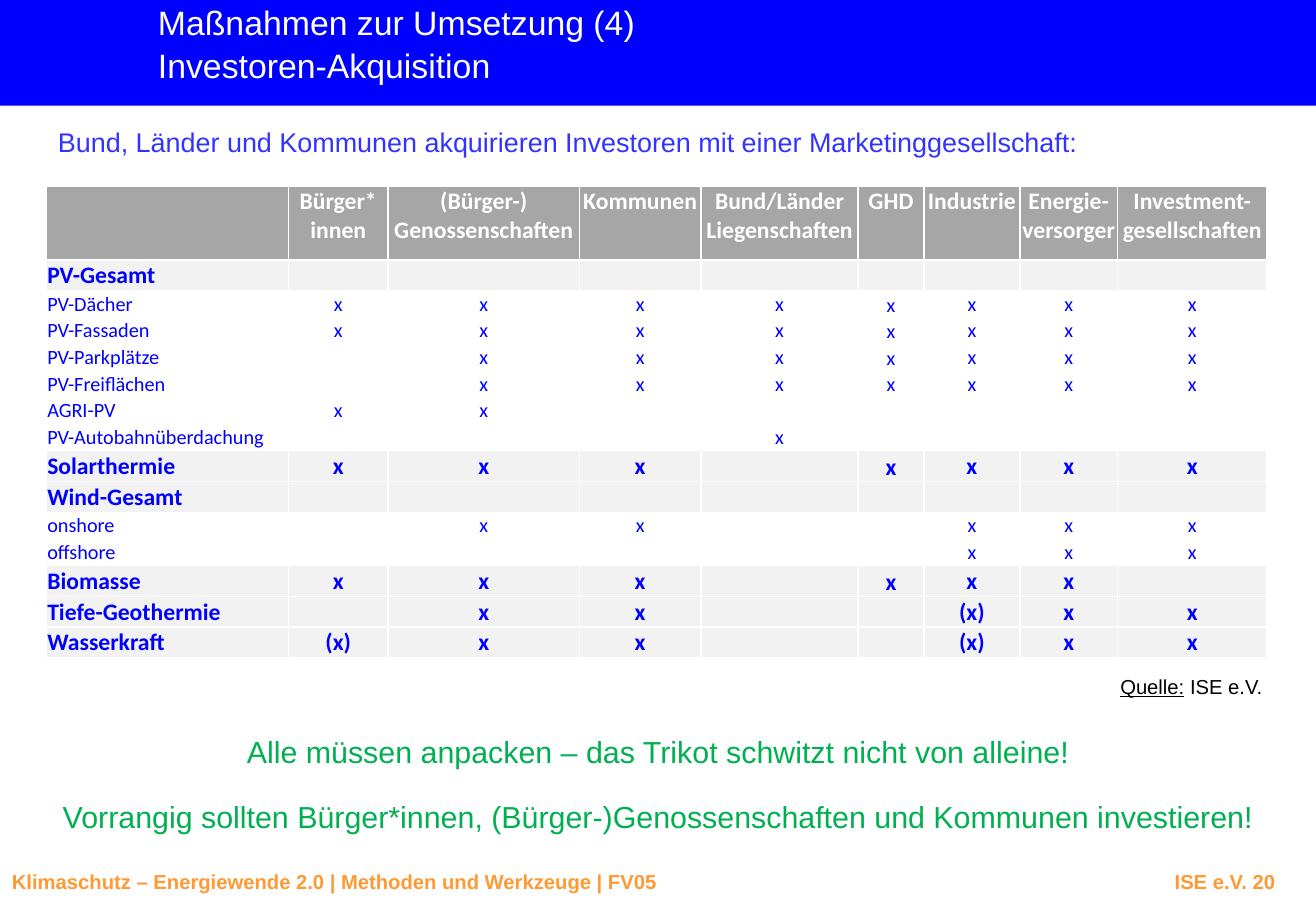
from dataclasses import dataclass
from itertools import accumulate

from lxml import etree
from pptx import Presentation
from pptx import util as u
from pptx.dml.color import RGBColor
from pptx.enum import shapes, text
from pptx.oxml import ns


@dataclass(frozen=True)
class Theme:
    bar: str = "0000FF"
    lead: str = "3333FF"
    entry: str = "0000FF"
    appeal: str = "00B050"
    footer: str = "FF9933"
    heading_fill: str = "A6A6A6"
    group_fill: str = "F2F2F2"
    white: str = "FFFFFF"
    black: str = "000000"
    sans: str = "Arial"
    grid_font: str = "Calibri"
    title_size: int = 20
    appeal_size: int = 18
    lead_size: int = 16
    group_size: int = 14
    small_size: int = 12


@dataclass(frozen=True)
class Box:
    left: float
    top: float
    width: float
    height: float

    def area(self, left, top, width, height):
        return Box(self.left + self.width * left / 100, self.top + self.height * top / 100,
                   self.width * width / 100, self.height * height / 100)

    def emu(self):
        return [u.Inches(n) for n in (self.left, self.top, self.width, self.height)]


THEME = Theme()
PAGE = Box(0, 0, 10.83, 7.5)
ALIGN = text.PP_ALIGN
TOP, BOTTOM = text.MSO_ANCHOR.TOP, text.MSO_ANCHOR.BOTTOM
NO_MARGIN = (0, 0, 0, 0)
CELL_MARGIN = (0.01, 0.01, 0.01, 0)

HEADINGS = ["", "Bürger*\ninnen", "(Bürger-)\nGenossenschaften", "Kommunen",
            "Bund/Länder\nLiegenschaften", "GHD", "Industrie",
            "Energie-\nversorger", "Investment-gesellschaften"]
COLUMN_SHARES = [199, 82, 157, 100, 129, 54, 79, 80, 123]
HEADING_SHARE, GROUP_SHARE, DETAIL_SHARE = 61, 25.3, 21.9
GHD_COLUMN = HEADINGS.index("GHD")
MEASURES = [
    ("PV-Gesamt", True, "- - - - - - - -"),
    ("PV-Dächer", False, "x x x x x x x x"),
    ("PV-Fassaden", False, "x x x x x x x x"),
    ("PV-Parkplätze", False, "- x x x x x x x"),
    ("PV-Freiflächen", False, "- x x x x x x x"),
    ("AGRI-PV", False, "x x - - - - - -"),
    ("PV-Autobahnüberdachung", False, "- - - x - - - -"),
    ("Solarthermie", True, "x x x - x x x x"),
    ("Wind-Gesamt", True, "- - - - - - - -"),
    ("onshore", False, "- x x - - x x x"),
    ("offshore", False, "- - - - - x x x"),
    ("Biomasse", True, "x x x - x x x -"),
    ("Tiefe-Geothermie", True, "- x x - - (x) x x"),
    ("Wasserkraft", True, "(x) x x - - (x) x x"),
]


def write(frame, content, size, color, font=THEME.sans, bold=False, align=ALIGN.LEFT,
          spacing=None, underlined="", tab=None):
    for index, line in enumerate(content.split("\n")):
        paragraph = frame.paragraphs[0] if index == 0 else frame.add_paragraph()
        paragraph.alignment = align
        if spacing:
            paragraph.line_spacing = spacing
        if tab:
            stops = etree.SubElement(paragraph._p.get_or_add_pPr(), ns.qn("a:tabLst"))
            etree.SubElement(stops, ns.qn("a:tab"), pos=str(u.Inches(tab)), algn="r")
        for words, underline in ((underlined, True), (line, False)):
            if words:
                run = paragraph.add_run()
                run.text = words
                run.font.size = u.Pt(size)
                run.font.name = font
                run.font.bold = bold
                run.font.underline = underline
                run.font.color.rgb = RGBColor.from_string(color)
        if not line:
            etree.SubElement(paragraph._p, ns.qn("a:endParaRPr"), sz=str(size * 100))


def set_margins(holder, margins):
    (holder.margin_left, holder.margin_top,
     holder.margin_right, holder.margin_bottom) = [u.Inches(m) for m in margins]


def set_fill(holder, color):
    holder.fill.solid()
    holder.fill.fore_color.rgb = RGBColor.from_string(color)


def add_text(slide, box, content, size, color, margins=(0.1, 0.05, 0.1, 0.05), **style):
    frame = slide.shapes.add_textbox(*box.emu()).text_frame
    frame.word_wrap = True
    set_margins(frame, margins)
    write(frame, content, size, color, **style)


def add_header(slide, box):
    bar = slide.shapes.add_shape(shapes.MSO_SHAPE.RECTANGLE, *box.emu())
    bar.shadow.inherit = False
    set_fill(bar, THEME.bar)
    bar.line.fill.background()
    slide.shapes._spTree.insert(2, bar._element)

    title = slide.shapes.title
    title.left, title.top, title.width, title.height = box.area(12, 0, 36.5, 77).emu()
    frame = title.text_frame
    frame.auto_size = text.MSO_AUTO_SIZE.NONE
    frame.word_wrap = False
    frame.vertical_anchor = TOP
    set_margins(frame, NO_MARGIN)
    write(frame, "Maßnahmen zur Umsetzung (4)\nInvestoren-Akquisition",
          THEME.title_size, THEME.white, spacing=1.05)


def set_borders(cell):
    properties = cell._tc.get_or_add_tcPr()
    for side in ("lnL", "lnR", "lnT", "lnB"):
        line = etree.SubElement(properties, ns.qn(f"a:{side}"), w=str(u.Pt(1)))
        paint = etree.SubElement(line, ns.qn("a:solidFill"))
        etree.SubElement(paint, ns.qn("a:srgbClr"), val=THEME.white)


def share_out(tracks, shares, length, attribute):
    edges = [0] + [u.Inches(length * reached / sum(shares)) for reached in accumulate(shares)]
    for track, start, end in zip(tracks, edges, edges[1:]):
        setattr(track, attribute, end - start)


def add_investors(slide, box):
    table = slide.shapes.add_table(len(MEASURES) + 1, len(HEADINGS), *box.emu()).table
    table.first_row = table.horz_banding = False
    row_shares = [HEADING_SHARE] + [GROUP_SHARE if group else DETAIL_SHARE
                                    for _, group, _ in MEASURES]
    share_out(table.columns, COLUMN_SHARES, box.width, "width")
    share_out(table.rows, row_shares, box.height, "height")

    lines = [(HEADINGS, THEME.heading_fill, THEME.white, True)]
    for measure, group, marks in MEASURES:
        entries = [measure] + ["" if mark == "-" else mark for mark in marks.split()]
        lines.append((entries, THEME.group_fill if group else THEME.white, THEME.entry, group))

    for row, (entries, fill, color, bold) in enumerate(lines):
        for column, entry in enumerate(entries):
            cell = table.cell(row, column)
            set_margins(cell, CELL_MARGIN)
            cell.vertical_anchor = BOTTOM if row and column == GHD_COLUMN else TOP
            set_borders(cell)
            set_fill(cell, fill)
            write(cell.text_frame, entry, THEME.group_size if bold else THEME.small_size,
                  color, font=THEME.grid_font, bold=bold,
                  align=ALIGN.CENTER if column else ALIGN.LEFT)


def add_appeals(slide, box):
    appeals = ["Alle müssen anpacken – das Trikot schwitzt nicht von alleine!",
               "Vorrangig sollten Bürger*innen, (Bürger-)Genossenschaften und Kommunen investieren!"]
    for index, appeal in enumerate(appeals):
        add_text(slide, box.area(0, 50 * index, 100, 41.5), appeal, THEME.appeal_size,
                 THEME.appeal, margins=(0.07,) * 4, align=ALIGN.CENTER)


def add_footer(slide, box):
    add_text(slide, box, "Klimaschutz – Energiewende 2.0 | Methoden und Werkzeuge | FV05\tISE e.V. 20",
             THEME.small_size, THEME.footer, bold=True, tab=box.width * 0.96)


def main():
    deck = Presentation()
    deck.slide_width, deck.slide_height = PAGE.emu()[2:]
    slide = deck.slides.add_slide(deck.slide_layouts[5])
    add_header(slide, PAGE.area(0, 0, 100, 11.6))
    add_text(slide, PAGE.area(3.5, 13.07, 93.44, 4.93),
             "Bund, Länder und Kommunen akquirieren Investoren mit einer Marketinggesellschaft:",
             THEME.lead_size, THEME.lead)
    add_investors(slide, PAGE.area(3.5, 20.4, 92.8, 51.87))
    add_text(slide, PAGE.area(85.13, 74, 11.91, 2.67), " ISE e.V.", THEME.small_size,
             THEME.black, margins=NO_MARGIN, underlined="Quelle:")
    add_appeals(slide, PAGE.area(0, 79.6, 100, 14.13))
    add_footer(slide, PAGE.area(0, 94.8, 100, 5.2))
    deck.save("out.pptx")


if __name__ == "__main__":
    main()
